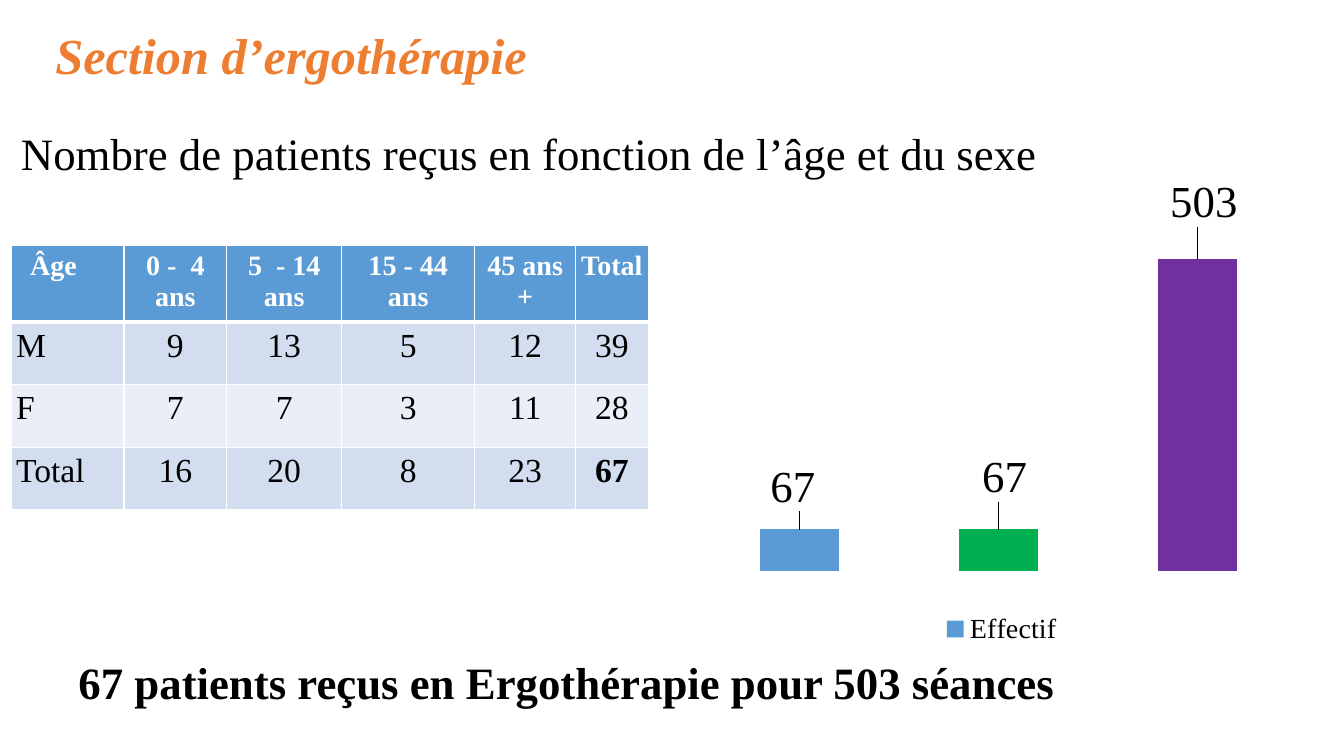
from lxml import etree
from pptx import Presentation
from pptx.chart.data import CategoryChartData
from pptx.dml.color import RGBColor
from pptx.enum.chart import XL_CHART_TYPE, XL_LABEL_POSITION, XL_LEGEND_POSITION
from pptx.enum.text import MSO_ANCHOR, PP_ALIGN
from pptx.oxml.ns import qn
from pptx.util import Inches, Pt

FONT = "Times New Roman"
BLUE = "5B9BD5"
ROWS = [
    ["Âge", "0 -  4 ans", "5  - 14 ans", "15 - 44 ans", "45 ans +", "Total"],
    ["M", "9", "13", "5", "12", "39"],
    ["F", "7", "7", "3", "11", "28"],
    ["Total", "16", "20", "8", "23", "67"],
]
COL_WIDTHS = [1.12, 1.02, 1.14, 1.32, 1, 0.72]
ROW_HEIGHTS = [0.71, 0.62, 0.62, 0.62]
ROW_FILLS = [BLUE, "D2DEEF", "EAEFF7", "D2DEEF"]
POINT_COLORS = [BLUE, "00B050", "7030A0"]
LABEL_SHIFTS = [(-0.01, -0.03), (0.01, -0.05), (0.01, -0.06)]


def rgb(color):
    return RGBColor.from_string(color)


def style_font(font, size, color="000000", bold=False, italic=False):
    font.name = FONT
    font.size = Pt(size)
    font.color.rgb = rgb(color)
    font.bold = bold
    font.italic = italic


def write(tf, text, align=PP_ALIGN.LEFT, spacing=None, **fmt):
    p = tf.paragraphs[0]
    p.alignment = align
    if spacing:
        p.line_spacing = spacing
    r = p.add_run()
    r.text = text
    style_font(r.font, **fmt)


def add_text(slide, box, text, anchor=MSO_ANCHOR.TOP, **fmt):
    tf = slide.shapes.add_textbox(*map(Inches, box)).text_frame
    tf.word_wrap = True
    tf.vertical_anchor = anchor
    write(tf, text, **fmt)


def set_borders(cell, bottom):
    tcPr = cell._tc.get_or_add_tcPr()
    widths = {"lnL": 1, "lnR": 1, "lnT": 1, "lnB": bottom}
    for i, (side, width) in enumerate(widths.items()):
        ln = etree.Element(qn("a:" + side), w=str(Pt(width)))
        fill = etree.SubElement(ln, qn("a:solidFill"))
        etree.SubElement(fill, qn("a:srgbClr"), val="FFFFFF")
        tcPr.insert(i, ln)


def add_age_table(slide, box):
    table = slide.shapes.add_table(len(ROWS), len(COL_WIDTHS), *map(Inches, box)).table
    for col, width in zip(table.columns, COL_WIDTHS):
        col.width = Inches(width)
    for i, (texts, height) in enumerate(zip(ROWS, ROW_HEIGHTS)):
        table.rows[i].height = Inches(height)
        header = i == 0
        for j, text in enumerate(texts):
            cell = table.cell(i, j)
            cell.margin_left = Inches(0.19 if header and j == 0 else 0.05)
            cell.margin_right = cell.margin_top = cell.margin_bottom = Inches(0.05)
            cell.fill.solid()
            cell.fill.fore_color.rgb = rgb(ROW_FILLS[i])
            set_borders(cell, 3 if header else 1)
            write(cell.text_frame, text,
                  align=PP_ALIGN.CENTER if j else PP_ALIGN.LEFT,
                  size=20 if header else 24,
                  color="FFFFFF" if header else "000000",
                  bold=header or text == "67")


def manual_layout(**settings):
    layout = etree.Element(qn("c:layout"))
    manual = etree.SubElement(layout, qn("c:manualLayout"))
    for name, value in settings.items():
        etree.SubElement(manual, qn("c:" + name), val=str(value))
    return layout


def add_sessions_chart(slide, box):
    data = CategoryChartData()
    data.categories = ["1", "2", "3"]
    data.add_series("Effectif", [67, 67, 503])
    chart = slide.shapes.add_chart(
        XL_CHART_TYPE.COLUMN_CLUSTERED, *map(Inches, box), data).chart
    style_font(chart.font, 40)
    chart.has_title = False
    chart.has_legend = True
    chart.legend.position = XL_LEGEND_POSITION.BOTTOM
    chart.legend.include_in_layout = False
    style_font(chart.legend.font, 20)
    chart.value_axis.minimum_scale = 0
    chart.value_axis.maximum_scale = 600
    chart.value_axis.has_major_gridlines = False
    chart.value_axis.visible = chart.category_axis.visible = False

    plot = chart.plots[0]
    plot.vary_by_categories = False
    plot.gap_width = 150
    series = plot.series[0]
    series.format.fill.solid()
    series.format.fill.fore_color.rgb = rgb(BLUE)
    for i, color in enumerate(POINT_COLORS):
        point = series.points[i]
        point.format.fill.solid()
        point.format.fill.fore_color.rgb = rgb(color)
        style_font(point.data_label.font, 32)
        point.data_label.position = XL_LABEL_POSITION.OUTSIDE_END
    labels = series.data_labels
    labels.show_value = True
    style_font(labels.font, 32)
    for dLbl, (x, y) in zip(labels._element.findall(qn("c:dLbl")), LABEL_SHIFTS):
        dLbl.insert(1, manual_layout(x=x, y=y))

    area = chart._chartSpace.chart.plotArea
    for default in area.findall(qn("c:layout")):
        area.remove(default)
    area.insert(0, manual_layout(layoutTarget="inner", xMode="edge", yMode="edge",
                                 x=0.03, y=0.03, w=0.93, h=0.8))


def build_slide(prs):
    slide = prs.slides.add_slide(prs.slide_layouts[6])
    add_text(slide, (0.45, 0.25, 4.93, 0.65), "Section d’ergothérapie",
             anchor=MSO_ANCHOR.MIDDLE, spacing=0.9, size=36,
             color="ED7D31", bold=True, italic=True)
    add_text(slide, (0.11, 1.2, 10.54, 0.64),
             "Nombre de patients reçus en fonction de l’âge et du sexe", size=32)
    add_age_table(slide, (0.11, 2.43, 6.32, 2.57))
    add_sessions_chart(slide, (6.75, 1.77, 6.37, 4.68))
    add_text(slide, (0.68, 6.45, 9.97, 0.64),
             "67 patients reçus en Ergothérapie pour 503 séances", size=32, bold=True)


def main():
    prs = Presentation()
    prs.slide_width = Inches(13.33)
    prs.slide_height = Inches(7.5)
    build_slide(prs)
    prs.save("out.pptx")


if __name__ == "__main__":
    main()
